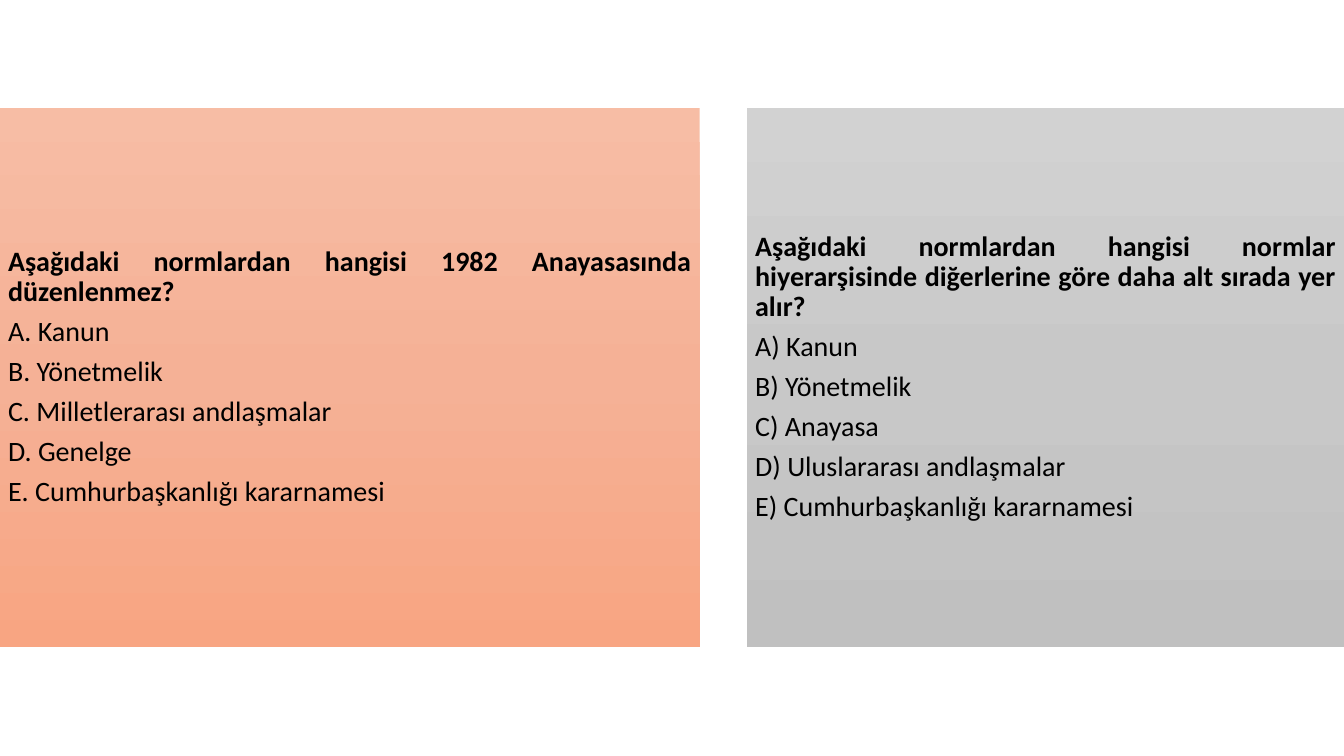
from copy import deepcopy

from lxml import etree
from pptx import Presentation
from pptx.dml.color import RGBColor
from pptx.enum.text import MSO_ANCHOR, MSO_AUTO_SIZE, PP_ALIGN
from pptx.oxml.ns import qn
from pptx.util import Inches, Pt

MIDDLE = MSO_ANCHOR.MIDDLE
NO_FIT = MSO_AUTO_SIZE.NONE
JUSTIFY = PP_ALIGN.JUSTIFY

COLORS = {
    "text": "000000",
    "orange": ["F7BDA5", "F5B196", "F8A582"],
    "gray": ["D2D2D2", "C8C8C8", "C0C0C0"],
}
TOP, HEIGHT, INSET = 1.07, 5.35, 0.08

# Question cards: left, width, gradient, question, answers
CARDS = [
    (0, 6.94, "orange",
     "Aşağıdaki normlardan hangisi 1982 Anayasasında düzenlenmez?",
     ["A. Kanun", "B. Yönetmelik", "C. Milletlerarası andlaşmalar",
      "D. Genelge", "E. Cumhurbaşkanlığı kararnamesi"]),
    (7.41, 5.92, "gray",
     "Aşağıdaki normlardan hangisi normlar hiyerarşisinde diğerlerine "
     "göre daha alt sırada yer alır?",
     ["A) Kanun", "B) Yönetmelik", "C) Anayasa",
      "D) Uluslararası andlaşmalar", "E) Cumhurbaşkanlığı kararnamesi"]),
]


def write(p, text, size=20, bold=False, font="Calibri", color="text"):
    pPr = p._p.get_or_add_pPr()
    pPr.set("marL", "0")
    pPr.set("indent", "0")
    etree.SubElement(pPr, qn("a:buNone"))
    p.alignment = JUSTIFY
    p.line_spacing = 0.9
    p.space_before = Pt(0)
    p.space_after = Pt(0.35 * size)
    r = p.add_run()
    r.text = text
    r.font.name = font
    r.font.size = Pt(size)
    r.font.bold = bold
    r.font.color.rgb = RGBColor.from_string(COLORS[color])


def fill_gradient(sp, colors):
    sp.fill.gradient()
    sp.fill.gradient_angle = 270  # top to bottom
    # The default gradient has two stops; add one in the middle
    first = sp._element.spPr.find(".//" + qn("a:gs"))
    first.addnext(deepcopy(first))
    for i, (stop, color) in enumerate(zip(sp.fill.gradient_stops, colors)):
        stop.position = i / 2
        stop.color.rgb = RGBColor.from_string(color)


prs = Presentation()
prs.slide_width, prs.slide_height = Inches(13.33), Inches(7.5)

# Two-content slide without a title
s = prs.slides.add_slide(prs.slide_layouts[3])
title = s.shapes.title._element
title.getparent().remove(title)

# Cards
for sp, (left, width, tone, question, answers) in zip(s.placeholders, CARDS):
    sp.left, sp.top = Inches(left), Inches(TOP)
    sp.width, sp.height = Inches(width), Inches(HEIGHT)
    fill_gradient(sp, COLORS[tone])

    tf = sp.text_frame
    tf.word_wrap = True
    tf.auto_size = NO_FIT
    tf.vertical_anchor = MIDDLE
    tf.margin_left = tf.margin_right = Inches(INSET)
    tf.margin_top = tf.margin_bottom = Inches(INSET)

    write(tf.paragraphs[0], question, bold=True)
    for answer in answers:
        write(tf.add_paragraph(), answer)

prs.save("out.pptx")
